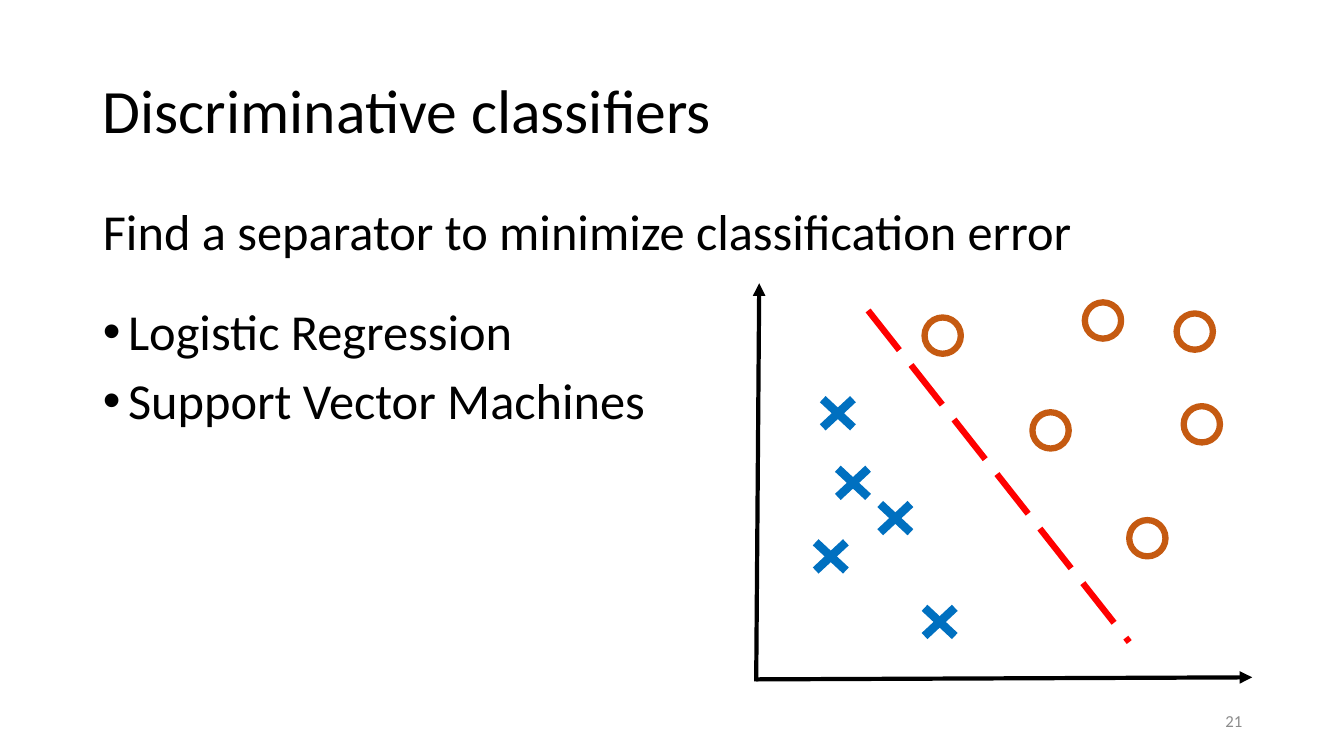
"""Build a slide on discriminative classifiers with a sketch of two separated classes."""
from dataclasses import dataclass

from lxml.etree import SubElement
from pptx import Presentation
from pptx.dml.color import RGBColor
from pptx.enum.dml import MSO_LINE
from pptx.enum.shapes import MSO_CONNECTOR, MSO_SHAPE
from pptx.enum.text import MSO_ANCHOR, MSO_AUTO_SIZE, PP_ALIGN
from pptx.oxml.ns import qn
from pptx.util import Inches, Pt

TITLE = "Discriminative classifiers"
STATEMENT = "Find a separator to minimize classification error"
METHODS = ["Logistic Regression", "Support Vector Machines"]
PAGE_NUMBER = "21"

GRID_COLUMNS, GRID_ROWS = 13.33, 7.5
TITLE_BOX = (0.92, 0.4, 11.5, 1.45)
BODY_BOX = (0.92, 2, 11.5, 4.76)
NUMBER_BOX = (9.42, 6.95, 3, 0.4)

AXES = [((7.5, 6.76), (7.53, 2.81)), ((7.5, 6.74), (12.42, 6.72))]
SEPARATOR = ((8.61, 3.08), (11.2, 6.37))
CROSS_CENTRES = [(8.31, 4.1), (8.24, 5.52), (9.32, 6.17), (8.88, 5.14), (8.46, 4.79)]
RING_CENTRES = [(9.35, 3.33), (10.42, 4.27), (11.38, 5.34),
                (11.92, 4.21), (10.94, 3.18), (11.85, 3.29)]
CROSS_REACH = (0.15, 0.14)
RING_SIZE = 0.36


@dataclass(frozen=True)
class Theme:
    """Colours, type sizes and line weights."""
    font: str = "Calibri"
    text: str = "000000"
    muted: str = "8C8C8C"
    cross: str = "0070C0"
    ring: str = "C55A11"
    separator: str = "FF0000"
    title_size: int = 44
    body_size: int = 36
    number_size: int = 12
    axis_weight: float = 3
    cross_weight: float = 6
    ring_weight: float = 4.5


THEME = Theme()


def grid(*cells):
    return [Inches(cell) for cell in cells]


def place(shape, box):
    shape.left, shape.top, shape.width, shape.height = grid(*box)


def write(paragraph, text, size, color=THEME.text, align=PP_ALIGN.LEFT,
          spacing=0.9, before=0, bullet=False):
    paragraph.alignment = align
    paragraph.line_spacing = spacing
    paragraph.space_before = Pt(before)
    run = paragraph.add_run()
    run.text = text
    run.font.name = THEME.font
    run.font.size = Pt(size)
    run.font.color.rgb = RGBColor.from_string(color)
    properties = paragraph._p.get_or_add_pPr()
    indent = Inches(0.25) if bullet else 0
    properties.set("marL", str(indent))
    properties.set("indent", str(-indent))
    if bullet:
        SubElement(properties, qn("a:buFont"), typeface="Arial")
        SubElement(properties, qn("a:buChar"), char="•")
    else:
        SubElement(properties, qn("a:buNone"))


def style_line(line, color, weight):
    line.color.rgb = RGBColor.from_string(color)
    line.width = Pt(weight)


def draw_line(group, start, end, color, weight, dash=None, arrow=False):
    connector = group.shapes.add_connector(MSO_CONNECTOR.STRAIGHT, *grid(*start, *end))
    style_line(connector.line, color, weight)
    if dash:
        connector.line.dash_style = dash
    if arrow:
        SubElement(connector.line._get_or_add_ln(), qn("a:tailEnd"), type="triangle")
    SubElement(connector._element.spPr, qn("a:effectLst"))


def draw_cross(group, centre):
    x, y = centre
    reach_x, reach_y = CROSS_REACH
    for slope in (1, -1):
        draw_line(group, (x - reach_x, y - slope * reach_y),
                  (x + reach_x, y + slope * reach_y), THEME.cross, THEME.cross_weight)


def draw_ring(group, centre):
    x, y = centre
    box = (x - RING_SIZE / 2, y - RING_SIZE / 2, RING_SIZE, RING_SIZE)
    ring = group.shapes.add_shape(MSO_SHAPE.OVAL, *grid(*box))
    ring.shadow.inherit = False
    ring.fill.background()
    style_line(ring.line, THEME.ring, THEME.ring_weight)


def add_texts(slide):
    title, body = slide.shapes.title, slide.placeholders[1]
    number = slide.shapes.add_textbox(*grid(*NUMBER_BOX))
    place(title, TITLE_BOX)
    place(body, BODY_BOX)
    for shape, anchor in ((title, MSO_ANCHOR.MIDDLE), (body, MSO_ANCHOR.TOP),
                          (number, MSO_ANCHOR.MIDDLE)):
        frame = shape.text_frame
        frame.word_wrap = True
        frame.auto_size = MSO_AUTO_SIZE.NONE
        frame.vertical_anchor = anchor
    write(title.text_frame.paragraphs[0], TITLE, THEME.title_size)
    write(body.text_frame.paragraphs[0], STATEMENT, THEME.body_size, before=10)
    for index, method in enumerate(METHODS):
        write(body.text_frame.add_paragraph(), method, THEME.body_size,
              before=10 if index else 33, bullet=True)
    write(number.text_frame.paragraphs[0], PAGE_NUMBER, THEME.number_size,
          color=THEME.muted, align=PP_ALIGN.RIGHT, spacing=1.0)


def add_plot(slide):
    plot = slide.shapes.add_group_shape()
    for start, end in AXES:
        draw_line(plot, start, end, THEME.text, THEME.axis_weight, arrow=True)
    for centre in CROSS_CENTRES:
        draw_cross(plot, centre)
    draw_line(plot, *SEPARATOR, THEME.separator, THEME.ring_weight,
              dash=MSO_LINE.LONG_DASH)
    for centre in RING_CENTRES:
        draw_ring(plot, centre)


def main():
    presentation = Presentation()
    presentation.slide_width, presentation.slide_height = grid(GRID_COLUMNS, GRID_ROWS)
    slide = presentation.slides.add_slide(presentation.slide_layouts[1])
    add_texts(slide)
    add_plot(slide)
    presentation.save("out.pptx")


if __name__ == "__main__":
    main()
